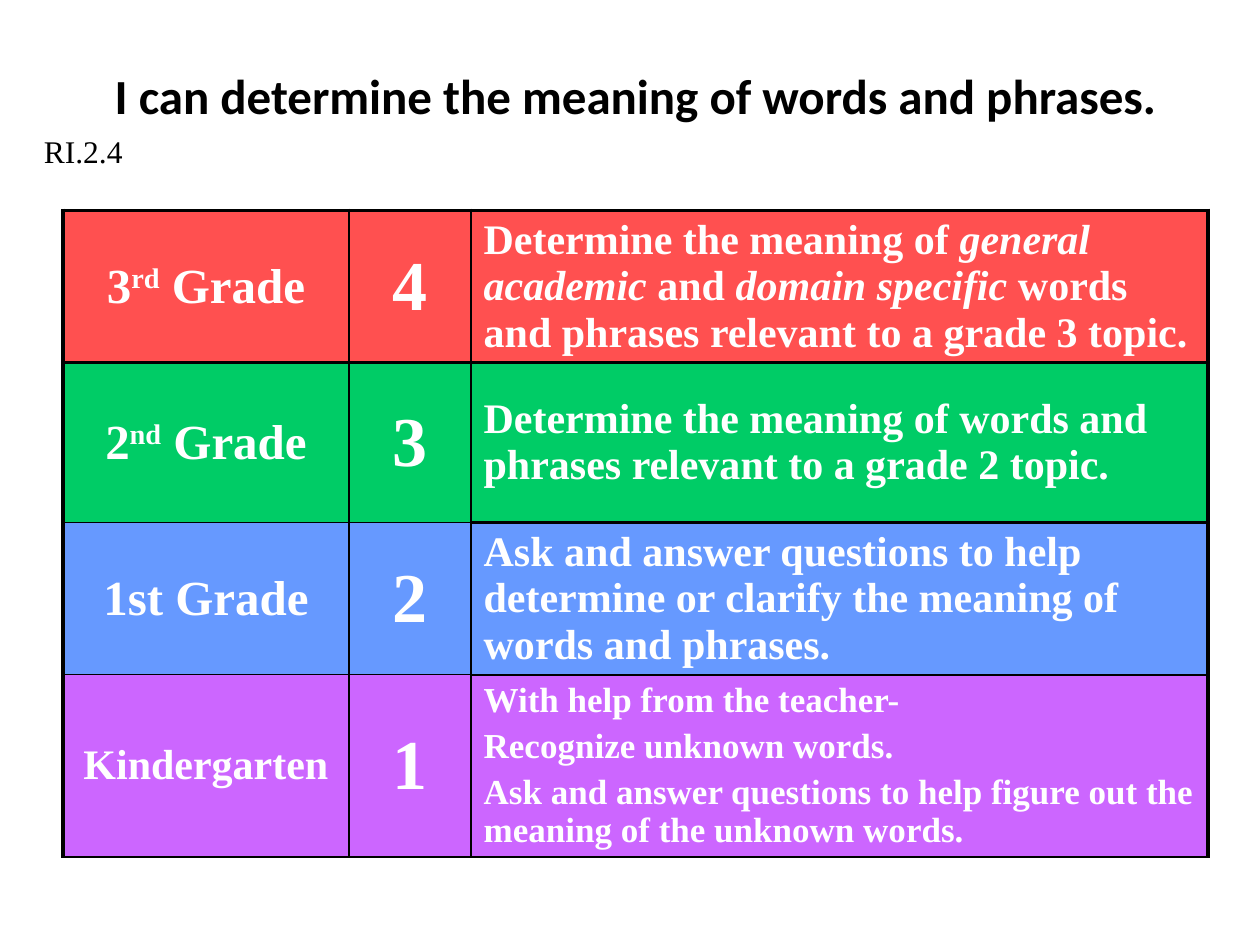
from pptx import Presentation
from pptx.dml.color import RGBColor
from pptx.enum.text import MSO_ANCHOR as ANCHOR, PP_ALIGN as ALIGN
from pptx.oxml.ns import qn
from pptx.util import Pt
from lxml.etree import SubElement

BLACK = RGBColor(0x00, 0x00, 0x00)
WHITE = RGBColor(0xFF, 0xFF, 0xFF)
RED = RGBColor(0xFF, 0x50, 0x50)
GREEN = RGBColor(0x00, 0xCC, 0x66)
BLUE = RGBColor(0x66, 0x99, 0xFF)
PURPLE = RGBColor(0xCC, 0x66, 0xFF)

SERIF = "Times New Roman"
COL_WIDTHS = [163.4, 69.8, 421.2]
SUPER = {"superscript": True}
ITALIC = {"italic": True}

LEVELS = [
    (RED, 87, [("3", {}), ("rd", SUPER), (" Grade", {})], 28, "4",
     [[("Determine the meaning of ", {}), ("general academic", ITALIC), (" and ", {}),
       ("domain specific ", ITALIC),
       ("words and phrases relevant to a grade 3 topic.", {})]], 24),
    (GREEN, 91.4, [("2", {}), ("nd", SUPER), (" Grade", {})], 28, "3",
     [[("Determine the meaning of words and phrases relevant to a grade 2 topic.", {})]], 24),
    (BLUE, 87, [("1st Grade", {})], 28, "2",
     [[("Ask and answer questions to help determine or clarify "
        "the meaning of words and phrases.", {})]], 24),
    (PURPLE, 104, [("Kindergarten", {})], 24, "1",
     [[("With help from the teacher-", {})],
      [("Recognize unknown words.", {})],
      [("Ask and answer questions to help figure out "
        "the meaning of the unknown words.", {})]], 20),
]


def add_text(p, text, size=18, font=SERIF, color=BLACK, bold=False, italic=False,
             superscript=False):
    r = p.add_run()
    r.text = text
    f = r.font
    f.size, f.name, f.bold, f.italic = Pt(size), font, bold, italic
    f.color.rgb = color
    if superscript:
        r._r.get_or_add_rPr().set("baseline", "30000")


def add_title(s, text):
    sp = s.shapes.title
    sp.left, sp.top, sp.width, sp.height = Pt(30), Pt(18), Pt(666), Pt(72)
    tf = sp.text_frame
    tf.vertical_anchor = ANCHOR.MIDDLE
    p = tf.paragraphs[0]
    p.alignment = ALIGN.CENTER
    add_text(p, text, size=28, font="Calibri", bold=True)


def add_label(s, text):
    tf = s.shapes.add_textbox(Pt(18), Pt(72), Pt(102), Pt(29)).text_frame
    tf.word_wrap = True
    add_text(tf.paragraphs[0], text)


def set_borders(cell, **widths):
    tcPr = cell._tc.get_or_add_tcPr()
    for side in "LRTB":
        ln = SubElement(tcPr, qn(f"a:ln{side}"), w=str(Pt(widths[side])))
        fill = SubElement(ln, qn("a:solidFill"))
        SubElement(fill, qn("a:srgbClr"), val=str(BLACK))


def rule_width(boundary, col):
    if boundary == 0:
        return 2.25
    return 1 if boundary in (2, 3) and col < 2 else 1.5


def fill_cell(cell, paragraphs, size, color, align):
    cell.fill.solid()
    cell.fill.fore_color.rgb = color
    cell.vertical_anchor = ANCHOR.MIDDLE
    tf = cell.text_frame
    for i, runs in enumerate(paragraphs):
        p = tf.add_paragraph() if i else tf.paragraphs[0]
        p.alignment = align
        if i:
            p.space_before = Pt(0.2 * size)
        for text, fmt in runs:
            add_text(p, text, size=size, color=WHITE, bold=True, **fmt)


def add_levels(s):
    height = sum(level[1] for level in LEVELS)
    table = s.shapes.add_table(len(LEVELS), len(COL_WIDTHS), Pt(36), Pt(120.2),
                               Pt(sum(COL_WIDTHS)), Pt(height)).table
    table.first_row = table.horz_banding = False
    for col, width in zip(table.columns, COL_WIDTHS):
        col.width = Pt(width)
    for i, (color, height, grade, grade_size, score, skills, skill_size) in enumerate(LEVELS):
        table.rows[i].height = Pt(height)
        contents = [([grade], grade_size, ALIGN.CENTER),
                    ([[(score, {})]], 40, ALIGN.CENTER),
                    (skills, skill_size, ALIGN.LEFT)]
        for j, (paragraphs, size, align) in enumerate(contents):
            cell = table.cell(i, j)
            set_borders(cell, L=2.25 if j == 0 else 1, R=2.25 if j == 2 else 1,
                        T=rule_width(i, j), B=rule_width(i + 1, j))
            fill_cell(cell, paragraphs, size, color, align)


def main():
    prs = Presentation()
    prs.slide_width, prs.slide_height = Pt(720), Pt(540)
    s = prs.slides.add_slide(prs.slide_layouts[5])
    add_title(s, "I can determine the meaning of words and phrases.")
    add_levels(s)
    add_label(s, "RI.2.4")
    prs.save("out.pptx")


if __name__ == "__main__":
    main()
